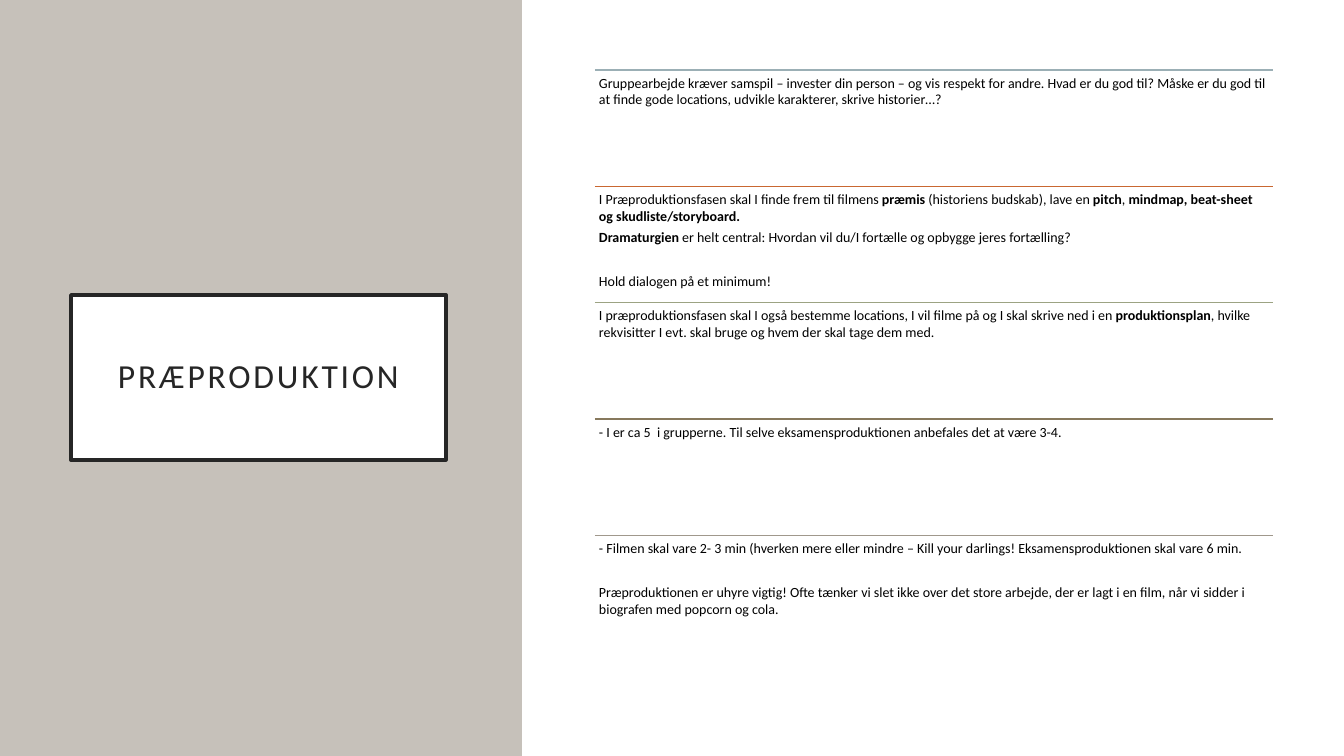
from dataclasses import dataclass
from lxml import etree
from pptx import Presentation
from pptx.dml.color import RGBColor
from pptx.enum.shapes import MSO_CONNECTOR, MSO_SHAPE
from pptx.enum.text import MSO_ANCHOR, PP_ALIGN
from pptx.oxml.ns import qn
from pptx.util import Pt

RECT = MSO_SHAPE.RECTANGLE
LINE = MSO_CONNECTOR.STRAIGHT
TOP, MID = MSO_ANCHOR.TOP, MSO_ANCHOR.MIDDLE
LEFT, CENTER = PP_ALIGN.LEFT, PP_ALIGN.CENTER
WIDE, HIGH = 1344, 756
SCALE = 12192000 / WIDE


@dataclass(frozen=True)
class Theme:
    font: str = "Calibri"
    head: int = 24
    body: int = 10
    sand: str = "C6C1BA"
    white: str = "FFFFFF"
    dark: str = "262626"
    black: str = "000000"
    rules: tuple = ("9BAFB5", "C96731", "9CA383", "87795D", "A0988C")


THEME = Theme()
AFTER = 3.5  # points after each paragraph
BREAK = 15.7  # points before a paragraph that stands apart

# Each row holds (space before, runs) paragraphs; every second run is bold
ROWS = [
    [(0, ["Gruppearbejde kræver samspil – invester din person – og vis respekt for andre. "
          "Hvad er du god til? Måske er du god til at finde gode locations, udvikle "
          "karakterer, skrive historier…?"])],
    [(0, ["I Præproduktionsfasen skal I finde frem til filmens ", "præmis ",
          "(historiens budskab), lave en ", "pitch", ", ",
          "mindmap, beat-sheet og skudliste/storyboard."]),
     (0, ["", "Dramaturgien",
          " er helt central: Hvordan vil du/I fortælle og opbygge jeres fortælling?"]),
     (BREAK, ["Hold dialogen på et minimum!"])],
    [(0, ["I præproduktionsfasen skal I også bestemme locations, I vil filme på og I skal "
          "skrive ned i en ", "produktionsplan",
          ", hvilke rekvisitter I evt. skal bruge og hvem der skal tage dem med."])],
    [(0, ["- I er ca 5  i grupperne. Til selve eksamensproduktionen anbefales det at "
          "være 3-4."])],
    [(0, ["- Filmen skal vare 2- 3 min (hverken mere eller mindre – Kill your darlings! "
          "Eksamensproduktionen skal vare 6 min."]),
     (BREAK, ["Præproduktionen er uhyre vigtig! Ofte tænker vi slet ikke over det store "
              "arbejde, der er lagt i en film, når vi sidder i biografen med popcorn "
              "og cola."])],
]


def px(*nums):
    return [round(n * SCALE) for n in nums]


def rgb(code):
    return RGBColor.from_string(code)


def panel(slide, box, fill, edge=None, width=0):
    shape = slide.shapes.add_shape(RECT, *px(*box))
    shape.shadow.inherit = False
    shape.fill.solid()
    shape.fill.fore_color.rgb = rgb(fill)
    if edge:
        shape.line.color.rgb = rgb(edge)
        shape.line.width = Pt(width)
    else:
        shape.line.fill.background()
    return shape


def rule(slide, x, y, w, color):
    line = slide.shapes.add_connector(LINE, *px(x, y, x + w, y))
    line.line.color.rgb = rgb(color)
    line.line.width = Pt(1)
    etree.SubElement(line._element.spPr, qn("a:effectLst"))


def write(shape, paras, size=THEME.body, color=THEME.black, align=LEFT,
          anchor=TOP, inset=4, after=AFTER, lead=1.0, track=0):
    frame = shape.text_frame
    frame.word_wrap = True
    frame.vertical_anchor = anchor
    frame.margin_left = frame.margin_right = px(inset)[0]
    frame.margin_top = frame.margin_bottom = px(inset)[0]
    for i, (before, runs) in enumerate(paras):
        para = frame.add_paragraph() if i else frame.paragraphs[0]
        para.alignment = align
        para.line_spacing = lead
        para.space_before, para.space_after = Pt(before), Pt(after)
        for j, text in enumerate(runs):
            if not text:
                continue
            run = para.add_run()
            run.text = text
            font = run.font
            font.name, font.size, font.bold = THEME.font, Pt(size), j % 2 == 1
            font.color.rgb = rgb(color)
            if track:
                run._r.get_or_add_rPr().set("spc", str(track * 100))


def side(slide, box):
    # Sand panel with the framed title
    x, y, w, h = box
    panel(slide, box, THEME.sand)
    card = panel(slide, (x + 71, y + 295, w - 147, 165), THEME.white, THEME.dark, 2.5)
    write(card, [(0, ["PRÆPRODUKTION"])], size=THEME.head, color=THEME.dark,
          align=CENTER, anchor=MID, inset=20, after=0, lead=0.9, track=2)


def points(slide, box):
    # Equal rows, each under a coloured rule
    x, y, w, h = box
    step = h / len(ROWS)
    for i, (paras, color) in enumerate(zip(ROWS, THEME.rules)):
        top = y + i * step
        rule(slide, x, top, w, color)
        write(slide.shapes.add_textbox(*px(x, top, w, step)), paras)


def main():
    deck = Presentation()
    deck.slide_width, deck.slide_height = px(WIDE, HIGH)
    slide = deck.slides.add_slide(deck.slide_layouts[6])
    side(slide, (0, 0, 522, HIGH))
    panel(slide, (524, 0, 820, HIGH), THEME.white)
    points(slide, (595, 70, 678, 582))
    deck.save("out.pptx")


if __name__ == "__main__":
    main()
